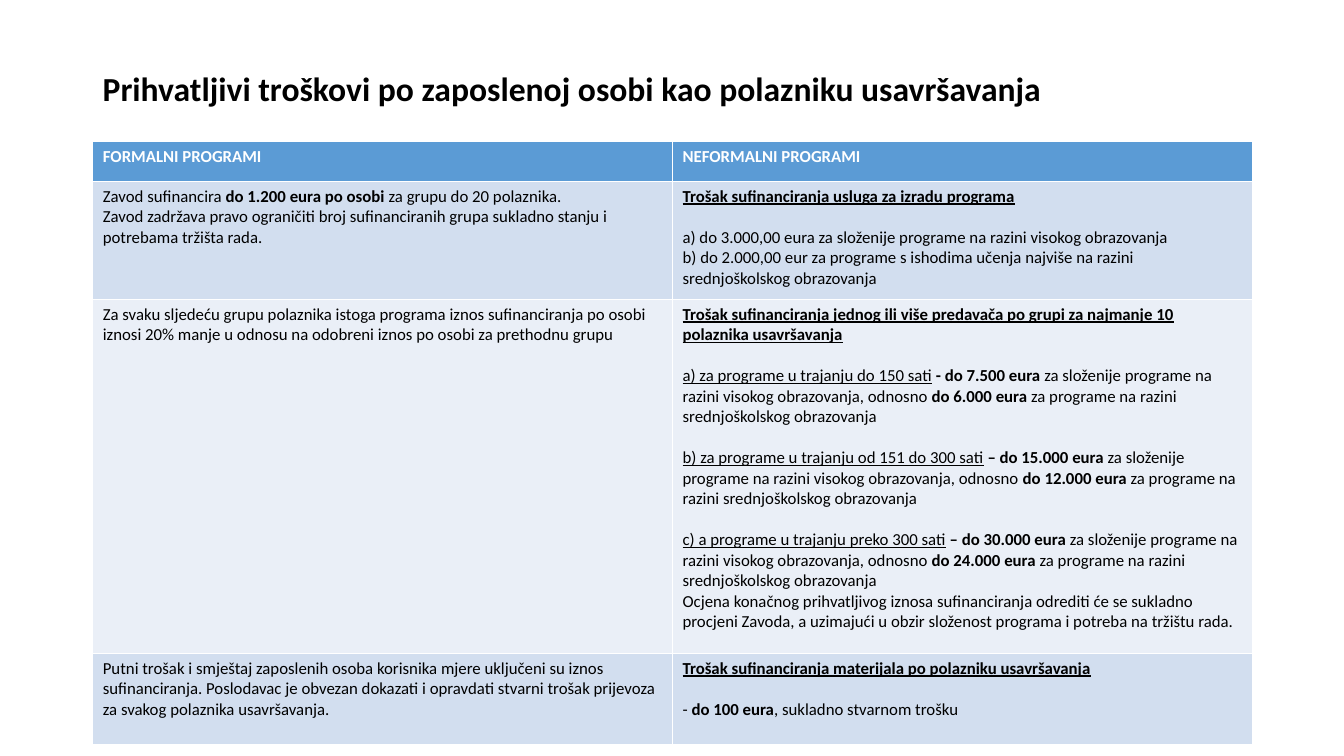
from lxml import etree
from pptx import Presentation
from pptx.dml.color import RGBColor
from pptx.enum.text import MSO_ANCHOR
from pptx.oxml.ns import qn
from pptx.util import Inches, Pt

MIDDLE = MSO_ANCHOR.MIDDLE
FONT = "Calibri"
BLACK, WHITE = "000000", "FFFFFF"
ROW_FILLS = ["5B9BD5", "D2DEEF", "EAEFF7", "D2DEEF"]
ROW_HEIGHTS = [0.4, 1.17, 3.51, 0.91]
COLUMN_WIDTH = 5.75
LINE_GAP = 14.65  # points, one line of 12 pt text


def add_runs(para, runs, size, color):
    """Add (text, style) runs; style holds b for bold and u for underline."""
    for text, style in runs:
        span = para.add_run()
        span.text = text
        span.font.name = FONT
        span.font.size = Pt(size)
        span.font.bold = "b" in style
        span.font.underline = "u" in style
        span.font.color.rgb = RGBColor.from_string(color)


def add_borders(cell, color, width):
    properties = cell._tc.get_or_add_tcPr()
    for side in ("lnL", "lnR", "lnT", "lnB"):
        line = etree.SubElement(properties, qn(f"a:{side}"), w=str(Pt(width)))
        fill = etree.SubElement(line, qn("a:solidFill"))
        etree.SubElement(fill, qn("a:srgbClr"), val=color)


# Each cell is a list of paragraphs: (lines of space before, runs)
lecturer_costs = [
    (0, [("Trošak sufinanciranja jednog ili više predavača po grupi za najmanje 10 polaznika usavršavanja", "bu")]),
]
for duration, dash, higher, secondary in [
    ("a) za programe u trajanju do 150 sati", "-", "7.500", "6.000"),
    ("b) za programe u trajanju od 151 do 300 sati", "–", "15.000", "12.000"),
    ("c) a programe u trajanju preko 300 sati", "–", "30.000", "24.000"),
]:
    lecturer_costs.append((1, [
        (duration, "u"),
        (" ", ""),
        (f"{dash} do {higher} eura ", "b"),
        ("za složenije programe na razini visokog obrazovanja, odnosno ", ""),
        (f"do {secondary} eura", "b"),
        (" za programe na razini srednjoškolskog obrazovanja", ""),
    ]))
lecturer_costs.append((0, [
    ("Ocjena konačnog prihvatljivog iznosa sufinanciranja odrediti će se sukladno procjeni Zavoda, "
     "a uzimajući u obzir složenost programa i potreba na tržištu rada.", ""),
]))

rows = [
    [
        [(0, [("FORMALNI PROGRAMI", "b")])],
        [(0, [("NEFORMALNI PROGRAMI", "b")])],
    ],
    [
        [
            (0, [("Zavod sufinancira ", ""), ("do 1.200 eura po osobi", "b"),
                 (" za grupu do 20 polaznika.", "")]),
            (0, [("Zavod zadržava pravo ograničiti broj sufinanciranih grupa sukladno stanju i "
                  "potrebama tržišta rada.", "")]),
        ],
        [
            (0, [("Trošak sufinanciranja usluga za izradu programa", "bu")]),
            (1, [("a) do 3.000,00 eura za složenije programe na razini visokog obrazovanja", "")]),
            (0, [("b) do 2.000,00 eur za programe s ishodima učenja najviše na razini "
                  "srednjoškolskog obrazovanja", "")]),
        ],
    ],
    [
        [(0, [("Za svaku sljedeću grupu polaznika istoga programa iznos sufinanciranja po osobi "
               "iznosi 20% manje u odnosu na odobreni iznos po osobi za prethodnu grupu", "")])],
        lecturer_costs,
    ],
    [
        [(0, [("Putni trošak i smještaj zaposlenih osoba korisnika mjere uključeni su iznos "
               "sufinanciranja. Poslodavac je obvezan dokazati i opravdati stvarni trošak prijevoza "
               "za svakog polaznika usavršavanja.", "")])],
        [
            (0, [("Trošak sufinanciranja materijala po polazniku usavršavanja", "bu")]),
            (1, [("- ", ""), ("do 100 eura", "b"), (", sukladno stvarnom trošku", "")]),
        ],
    ],
]

deck = Presentation()
deck.slide_width = Inches(13.33)
deck.slide_height = Inches(7.5)
page = deck.slides.add_slide(deck.slide_layouts[6])

title_box = page.shapes.add_textbox(Inches(0.92), Inches(0.4), Inches(11.5), Inches(1))
title_frame = title_box.text_frame
title_frame.word_wrap = True
title_frame.vertical_anchor = MIDDLE
title_para = title_frame.paragraphs[0]
title_para.line_spacing = 0.9
add_runs(title_para, [("Prihvatljivi troškovi po zaposlenoj osobi kao polazniku usavršavanja", "b")], 24, BLACK)

table = page.shapes.add_table(
    len(rows), 2, Inches(0.92), Inches(1.4), Inches(2 * COLUMN_WIDTH), Inches(sum(ROW_HEIGHTS))
).table
for column in table.columns:
    column.width = Inches(COLUMN_WIDTH)

for row_index, (row, height, row_fill) in enumerate(zip(rows, ROW_HEIGHTS, ROW_FILLS)):
    table.rows[row_index].height = Inches(height)
    text_color = WHITE if row_index == 0 else BLACK
    for column_index, paragraphs in enumerate(row):
        cell = table.cell(row_index, column_index)
        add_borders(cell, WHITE, 1)
        cell.fill.solid()
        cell.fill.fore_color.rgb = RGBColor.from_string(row_fill)
        frame = cell.text_frame
        for para_index, (gap_lines, runs) in enumerate(paragraphs):
            para = frame.add_paragraph() if para_index else frame.paragraphs[0]
            if gap_lines:
                para.space_before = Pt(gap_lines * LINE_GAP)
            add_runs(para, runs, 12, text_color)

deck.save("out.pptx")
